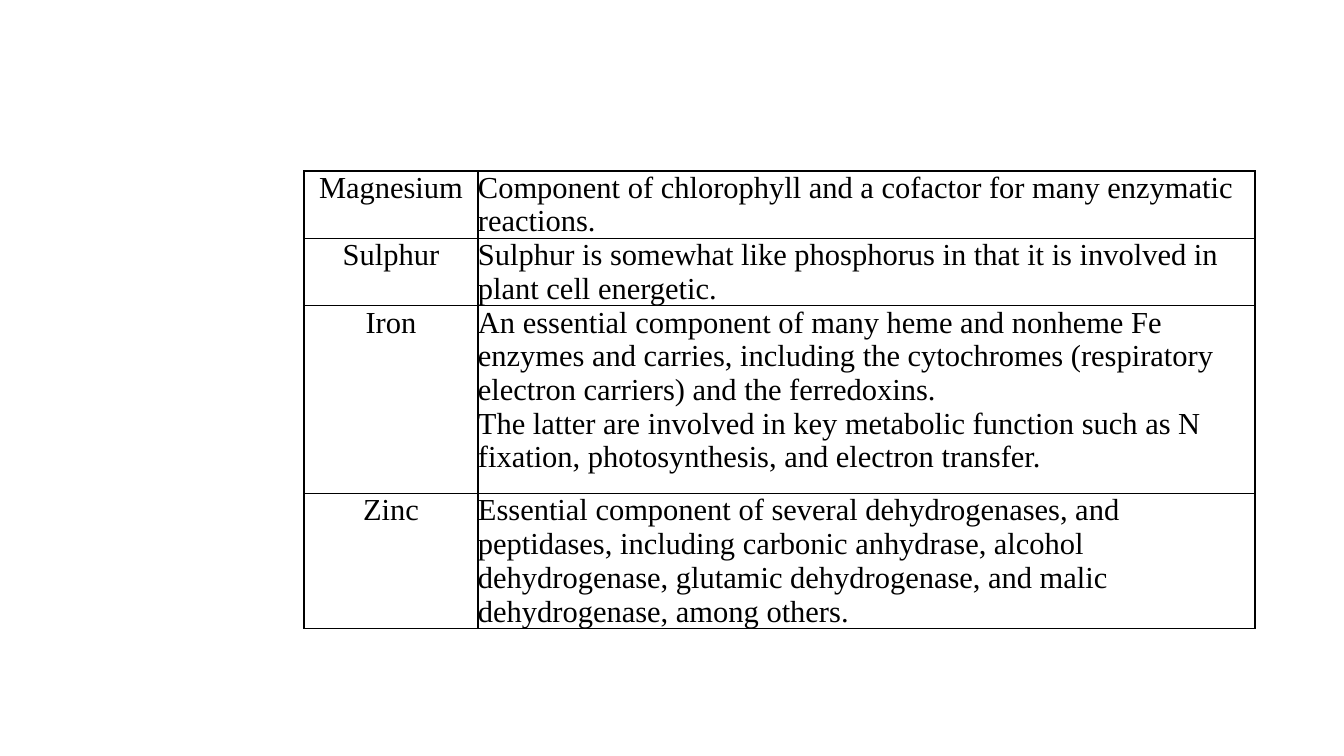
from lxml.etree import SubElement
from pptx import Presentation
from pptx.dml.color import RGBColor
from pptx.enum.text import MSO_ANCHOR, PP_ALIGN
from pptx.oxml.ns import qn
from pptx.util import Emu, Pt

PX = 10000  # EMU in one px
BLACK = RGBColor(0x00, 0x00, 0x00)

SLIDE_SIZE = (1344, 756)
TABLE_ORIGIN = (304, 171)
COLUMN_WIDTHS = (174, 777)

FONT_FORMAT = {"name": "Times New Roman", "size": Pt(24)}
CELL_FORMAT = {
    "margin_left": 0,
    "margin_right": 0,
    "margin_top": 0,
    "margin_bottom": 0,
    "vertical_anchor": MSO_ANCHOR.TOP,
}
TABLE_FORMAT = {"first_row": False, "horz_banding": False}

# Nutrient, paragraphs on its role, row height in px
NUTRIENTS = [
    ("Magnesium",
     ["Component of chlorophyll and a cofactor for many enzymatic reactions."],
     67),
    ("Sulphur",
     ["Sulphur is somewhat like phosphorus in that it is involved in plant "
      "cell energetic."],
     67),
    ("Iron",
     ["An essential component of many heme and nonheme Fe enzymes and carries, "
      "including the cytochromes (respiratory electron carriers) and the "
      "ferredoxins.",
      "The latter are involved in key metabolic function such as N fixation, "
      "photosynthesis, and electron transfer."],
     188),
    ("Zinc",
     ["Essential component of several dehydrogenases, and peptidases, "
      "including carbonic anhydrase, alcohol dehydrogenase, glutamic "
      "dehydrogenase, and malic dehydrogenase, among others."],
     135),
]


def px(length):
    return Emu(length * PX)


def apply_format(target, values):
    for name, value in values.items():
        setattr(target, name, value)


def add_borders(cell):
    properties = cell._tc.get_or_add_tcPr()
    for position, side in enumerate(("lnL", "lnR", "lnT", "lnB")):
        border = SubElement(properties, qn(f"a:{side}"), w=str(Pt(1)))
        color_fill = SubElement(border, qn("a:solidFill"))
        SubElement(color_fill, qn("a:srgbClr"), val=str(BLACK))
        # Borders come before the cell fill
        properties.insert(position, border)


def write_cell(cell, paragraphs, alignment):
    apply_format(cell, CELL_FORMAT)
    cell.fill.background()
    add_borders(cell)
    cell.text_frame.text = "\n".join(paragraphs)
    for paragraph in cell.text_frame.paragraphs:
        paragraph.alignment = alignment
        for run in paragraph.runs:
            apply_format(run.font, FONT_FORMAT)
            run.font.color.rgb = BLACK


def add_nutrient_table(slide):
    left, top = TABLE_ORIGIN
    height = sum(row_height for _, _, row_height in NUTRIENTS)
    table = slide.shapes.add_table(
        len(NUTRIENTS), len(COLUMN_WIDTHS),
        px(left), px(top), px(sum(COLUMN_WIDTHS)), px(height)).table
    apply_format(table, TABLE_FORMAT)
    for column, width in zip(table.columns, COLUMN_WIDTHS):
        column.width = px(width)
    for row, (nutrient, role, row_height) in zip(table.rows, NUTRIENTS):
        row.height = px(row_height)
        nutrient_cell, role_cell = row.cells
        write_cell(nutrient_cell, [nutrient], PP_ALIGN.CENTER)
        write_cell(role_cell, role, PP_ALIGN.LEFT)


def main():
    presentation = Presentation()
    width, height = SLIDE_SIZE
    presentation.slide_width = px(width)
    presentation.slide_height = px(height)
    slide = presentation.slides.add_slide(presentation.slide_layouts[6])

    # Table of nutrients and their roles
    add_nutrient_table(slide)
    presentation.save("out.pptx")


if __name__ == "__main__":
    main()
